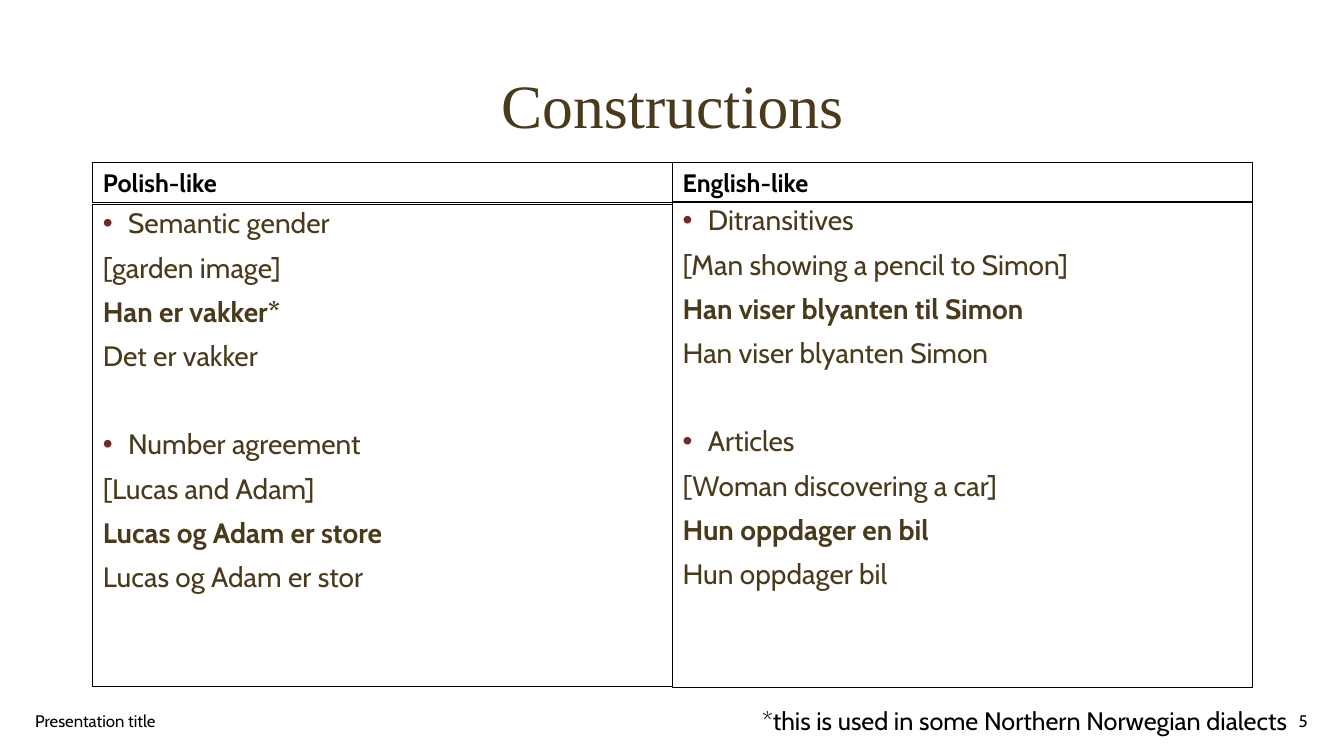
from lxml.etree import SubElement
from pptx import Presentation
from pptx.dml.color import RGBColor
from pptx.enum.text import MSO_ANCHOR, MSO_AUTO_SIZE, PP_ALIGN
from pptx.oxml.ns import qn
from pptx.util import Inches, Pt

BROWN = RGBColor(0x4A, 0x3A, 0x1C)
MAROON = RGBColor(0x73, 0x29, 0x2A)
BLACK = RGBColor(0, 0, 0)


def add_text(frame, text, size=18, font="Cabin", color=BLACK, bold=False,
             align=PP_ALIGN.LEFT, spacing=1.0, before=0, bullet=False):
    para = frame.paragraphs[0]
    if para.runs:
        para = frame.add_paragraph()
    para.alignment = align
    para.line_spacing = spacing
    para.space_before = Pt(before)
    properties = para._p.get_or_add_pPr()
    indent = Inches(0.25) if bullet else 0
    properties.set("marL", str(indent))
    properties.set("indent", str(-indent))
    if bullet:
        bullet_color = SubElement(properties, qn("a:buClr"))
        SubElement(bullet_color, qn("a:srgbClr"), val=str(MAROON))
        SubElement(properties, qn("a:buFont"), typeface="Arial")
        SubElement(properties, qn("a:buChar"), char="•")
    else:
        SubElement(properties, qn("a:buNone"))
    span = para.add_run()
    span.text = text
    span.font.name = font
    span.font.size = Pt(size)
    span.font.bold = bold
    span.font.color.rgb = color


def place(box, left, top, width, height, anchor=MSO_ANCHOR.TOP):
    box.left, box.top = Inches(left), Inches(top)
    box.width, box.height = Inches(width), Inches(height)
    frame = box.text_frame
    frame.word_wrap = True
    frame.auto_size = MSO_AUTO_SIZE.NONE
    frame.vertical_anchor = anchor
    return frame


deck = Presentation()
deck.slide_width = Inches(13.33)
deck.slide_height = Inches(7.5)
page = deck.slides.add_slide(deck.slide_layouts.get_by_name("Comparison"))

title = place(page.shapes.title, 0.92, 0.35, 11.5, 1.45, MSO_ANCHOR.MIDDLE)
add_text(title, "Constructions", size=44, font="Times New Roman", color=BROWN,
         align=PP_ALIGN.CENTER, spacing=0.9)

columns = [
    ("Polish-like", 1, 0.92, 2.03, 4.78, [
        ("Semantic gender", "[garden image]", "Han er vakker*", "Det er vakker"),
        ("Number agreement", "[Lucas and Adam]", "Lucas og Adam er store",
         "Lucas og Adam er stor"),
    ]),
    ("English-like", 3, 6.67, 2, 4.82, [
        ("Ditransitives", "[Man showing a pencil to Simon]",
         "Han viser blyanten til Simon", "Han viser blyanten Simon"),
        ("Articles", "[Woman discovering a car]", "Hun oppdager en bil",
         "Hun oppdager bil"),
    ]),
]
for heading, index, left, top, height, groups in columns:
    header = page.placeholders[index]
    body = page.placeholders[index + 1]
    add_text(place(header, left, 1.61, 5.75, 0.4), heading, bold=True)
    body_frame = place(body, left, top, 5.75, height)
    for group_number, group in enumerate(groups):
        for line_number, line in enumerate(group):
            starts_later_group = group_number > 0 and line_number == 0
            add_text(body_frame, line, size=20, color=BROWN, spacing=0.9,
                     before=41.5 if starts_later_group else 10,
                     bullet=line_number == 0, bold=line_number == 2)
    for box in (header, body):
        box.line.color.rgb = BLACK
        box.line.width = Pt(0.75)

notes = [
    ("Presentation title", 0.25, 4.5, 12, PP_ALIGN.LEFT, MSO_ANCHOR.MIDDLE),
    ("5", 10.07, 3, 12, PP_ALIGN.RIGHT, MSO_ANCHOR.MIDDLE),
    ("*this is used in some Northern Norwegian dialects", 7.46, 5.75, 18,
     PP_ALIGN.LEFT, MSO_ANCHOR.TOP),
]
for text, left, width, size, align, anchor in notes:
    box = page.shapes.add_textbox(0, 0, 0, 0)
    add_text(place(box, left, 6.95, width, 0.4, anchor), text, size=size, align=align)

deck.save("out.pptx")
